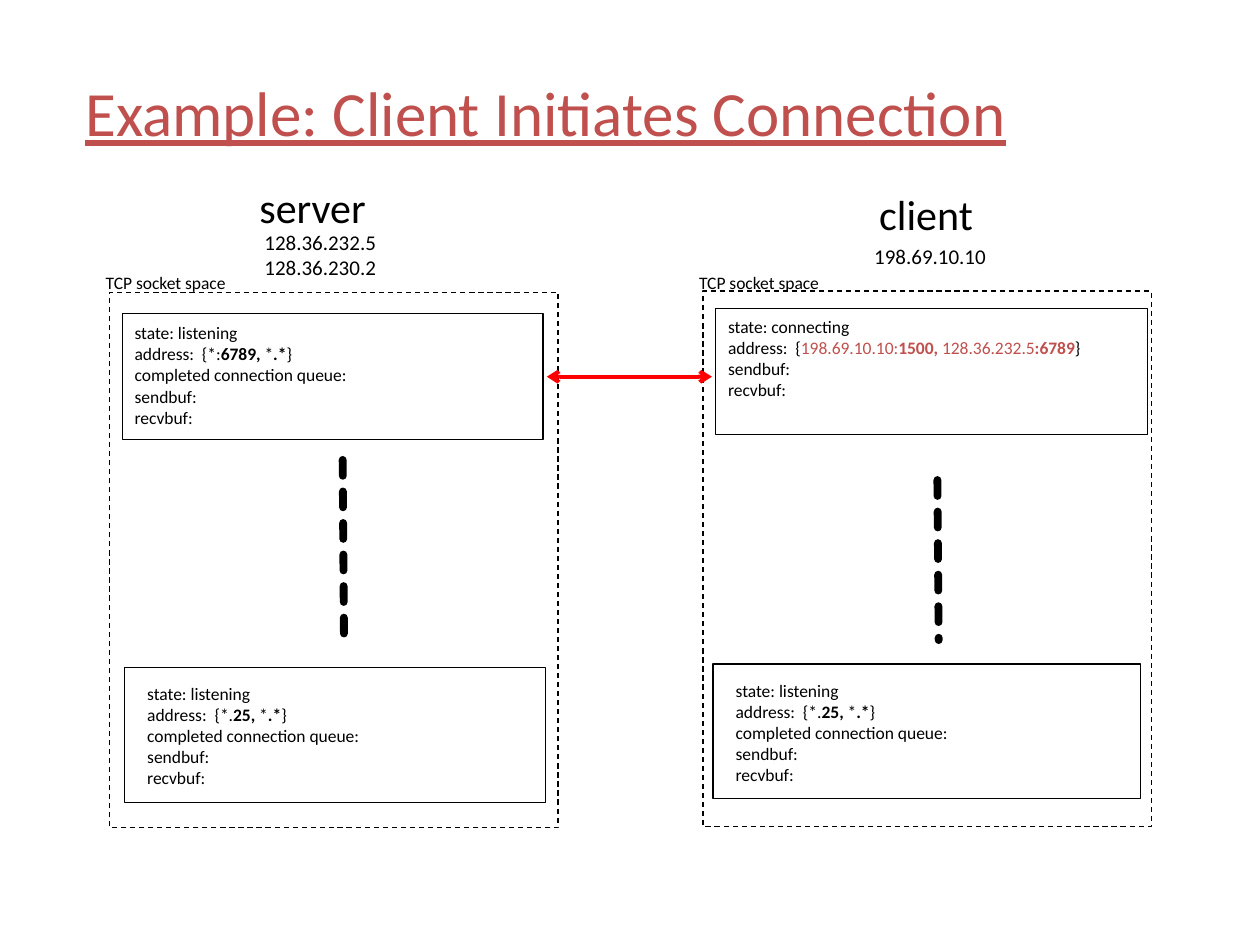
from dataclasses import dataclass

from lxml import etree
from pptx import Presentation
from pptx.dml.color import RGBColor
from pptx.enum import dml, shapes, text
from pptx.oxml.ns import qn
from pptx.util import Pt

PX = 9144  # EMU in one px, 100 px to the inch


@dataclass(frozen=True)
class Theme:
    font: str = "Calibri"
    ink: str = "000000"
    accent: str = "C0504D"
    link: str = "FF0000"
    title: int = 36
    host: int = 24
    addr: int = 12
    body: int = 10
    thin: float = 0.75
    bold: float = 2.25
    dots: float = 4.5


T = Theme()


def emu(*vals):
    return [v * PX for v in vals]


def label(slide, box, lines, size, color=T.ink, mid=False, wrap=False):
    """Lines are strings or lists of (words, bold, color) runs."""
    shape = slide.shapes.add_textbox(*emu(*box))
    frame = shape.text_frame
    frame.word_wrap = wrap
    if not wrap:
        frame.auto_size = text.MSO_AUTO_SIZE.SHAPE_TO_FIT_TEXT
    if mid:
        frame.vertical_anchor = text.MSO_ANCHOR.MIDDLE
    for i, line in enumerate(lines):
        para = frame.add_paragraph() if i else frame.paragraphs[0]
        para.font.name, para.font.size = T.font, Pt(size)
        para.font.color.rgb = RGBColor.from_string(color)
        if isinstance(line, str):
            para.text = line
            continue
        for words, bold, tint in line:
            run = para.add_run()
            run.text = words
            run.font.bold = bold
            run.font.color.rgb = RGBColor.from_string(tint)
    return frame


def frame_box(slide, box, dash=False):
    shape = slide.shapes.add_shape(shapes.MSO_SHAPE.RECTANGLE, *emu(*box))
    shape.shadow.inherit = False
    shape.fill.background()
    shape.line.color.rgb = RGBColor.from_string(T.ink)
    shape.line.width = Pt(T.thin)
    if dash:
        shape.line.dash_style = dml.MSO_LINE.DASH


def line(slide, ends, color, width):
    link = slide.shapes.add_connector(shapes.MSO_CONNECTOR.STRAIGHT, *emu(*ends))
    link.line.color.rgb = RGBColor.from_string(color)
    link.line.width = Pt(width)
    etree.SubElement(link._element.spPr, qn("a:effectLst"))
    return link


def dots(slide, x, y, high):
    link = line(slide, (x, y, x + 1, y + high), T.ink, T.dots)
    link.line.dash_style = dml.MSO_LINE.SQUARE_DOT
    link.line._ln.set("cap", "rnd")


def arrow(slide, ends):
    link = line(slide, ends, T.link, T.bold)
    for end in ("a:headEnd", "a:tailEnd"):
        etree.SubElement(link.line._ln, qn(end), type="arrow")


def state(name, pairs, queue=True):
    lines = [f"state: {name}", [("address:  {", False, T.ink), *pairs, ("}", False, T.ink)]]
    if queue:
        lines.append("completed connection queue:")
    return lines + ["sendbuf:", "recvbuf:"]


def listen(port):
    return state("listening", [(port[0], False, T.ink), (port[1:], True, T.ink),
                               ("*", False, T.ink), (".*", True, T.ink)])


def socket(slide, box, pad, size, lines):
    x, y, _, _ = box
    frame_box(slide, box)
    label(slide, (x + pad[0], y + pad[1], *size), lines, T.body)


def space(slide, box, socks, trail):
    """Dashed socket space; sockets and dots are placed from its corner."""
    x, y, _, _ = box
    frame_box(slide, box, dash=True)
    label(slide, (x - 13, 211, 132, 27), ["TCP socket space"], T.body)
    for (dx, dy, w, h), pad, size, lines in socks:
        socket(slide, (x + dx, y + dy, w, h), pad, size, lines)
    dots(slide, x + trail[0], y + trail[1], trail[2])


def server(slide, box):
    x, y, _, _ = box
    label(slide, (x + 109, y - 93, 121, 50), ["server"], T.host, mid=True)
    label(slide, (x + 113, y - 55, 122, 50), ["128.36.232.5\v128.36.230.2"], T.addr)
    space(slide, box, [
        ((10, 17, 334, 100), (0, 2), (205, 93), [
            *state("listening", [("*:", False, T.ink), ("6789, ", True, T.ink),
                                 ("*", False, T.ink), (".*", True, T.ink)])]),
        ((12, 298, 334, 107), (8, 7), (205, 93), mail()),
    ], (185, 133, 139))


def client(slide, box):
    x, y, _, _ = box
    label(slide, (x + 130, y - 86, 107, 50), ["client"], T.host, mid=True)
    label(slide, (x + 126, y - 43, 116, 30), ["198.69.10.10"], T.addr)
    pairs = [("198.69.10.10:", False, T.accent), ("1500, ", True, T.accent),
             ("128.36.232.5", False, T.accent), (":6789", True, T.accent)]
    space(slide, box, [
        ((10, 14, 343, 100), (0, 1), (349, 77), state("connecting", pairs, queue=False)),
        ((8, 296, 339, 107), (8, 8), (205, 93), mail()),
    ], (186, 150, 127))


def mail():
    return state("listening", [("*.", False, T.ink), ("25, ", True, T.ink),
                               ("*", False, T.ink), (".*", True, T.ink)])


def main():
    deck = Presentation()
    deck.slide_width, deck.slide_height = emu(1000, 750)
    slide = deck.slides.add_slide(deck.slide_layouts[6])

    # Title
    head = label(slide, (58, 26, 881, 125), ["Example: Client Initiates Connection"],
                 T.title, T.accent, mid=True, wrap=True)
    head.paragraphs[0].font.underline = True

    # Hosts with their socket spaces
    server(slide, (87, 232, 356, 425))
    client(slide, (558, 231, 356, 425))

    # Connection between the two sockets
    arrow(slide, (565, 299, 434, 299))

    deck.save("out.pptx")


if __name__ == "__main__":
    main()
